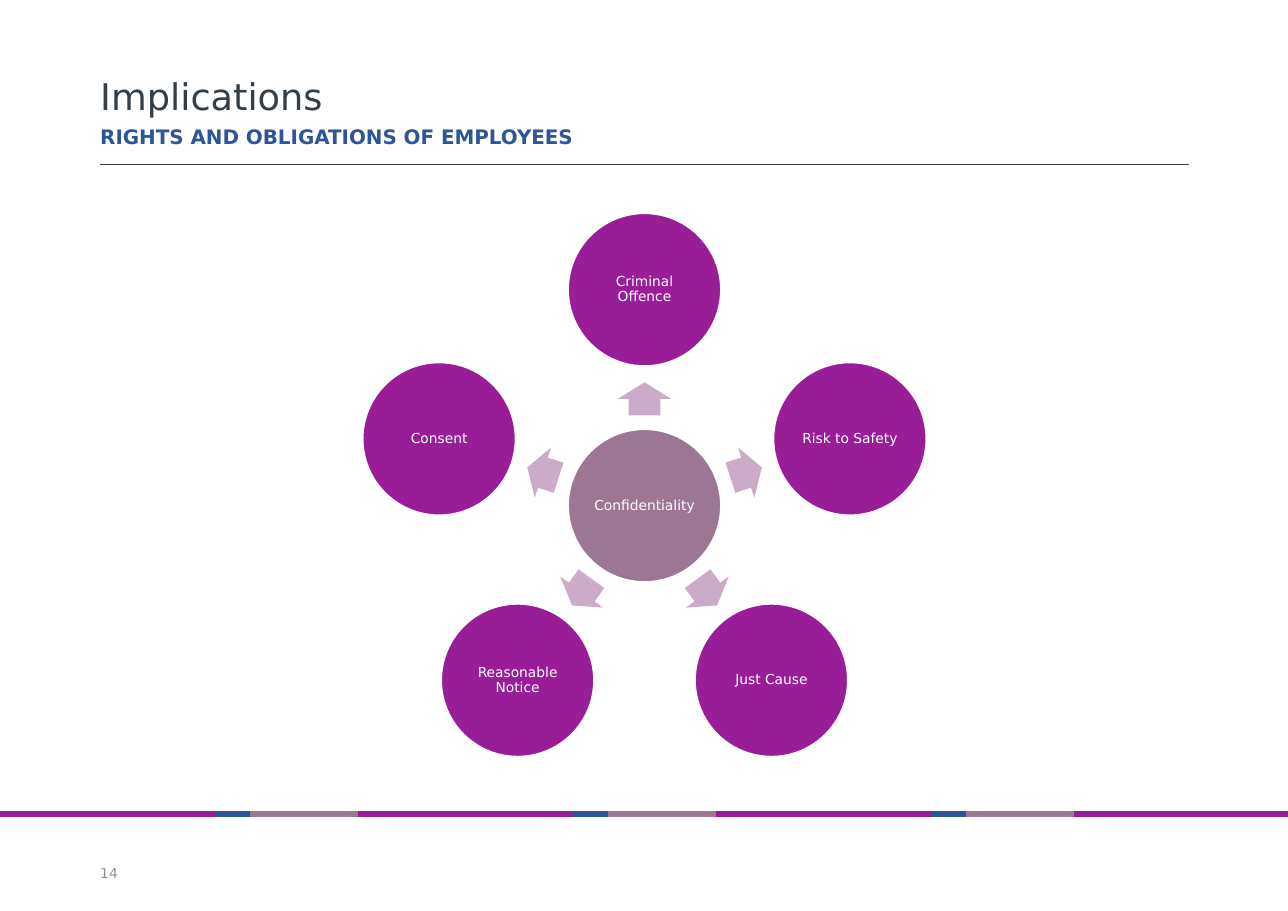
from dataclasses import dataclass
from math import cos, radians, sin

from pptx import Presentation
from pptx.dml.color import RGBColor
from pptx.enum.shapes import MSO_CONNECTOR, MSO_SHAPE
from pptx.enum.text import MSO_ANCHOR, PP_ALIGN
from pptx.oxml.ns import qn
from pptx.util import Inches, Pt

STRAIGHT = MSO_CONNECTOR.STRAIGHT
ELLIPSE = MSO_SHAPE.OVAL
ARROW = MSO_SHAPE.RIGHT_ARROW
TOP, MIDDLE, BOTTOM = MSO_ANCHOR.TOP, MSO_ANCHOR.MIDDLE, MSO_ANCHOR.BOTTOM
CENTER = PP_ALIGN.CENTER

PAGE_WIDTH, PAGE_HEIGHT = 11.69, 8.27
MARGIN = 0.91
CONTENT_WIDTH = 9.88

HUB_X, HUB_Y = 5.85, 4.59
CIRCLE_SIZE = 1.4
CIRCLE_ORBIT = 1.96
ARROW_LENGTH, ARROW_WIDTH = 0.3, 0.48
ARROW_ORBIT = 0.97

STRIPE_Y = 7.39
STRIPE_PERIOD = 3.25

TOPICS = ["Criminal Offence", "Risk to Safety", "Just Cause",
          "Reasonable Notice", "Consent"]


@dataclass(frozen=True)
class Theme:
    font: str = "DejaVu Sans"
    ink: str = "333F48"
    blue: str = "2C5697"
    purple: str = "981D97"
    mauve: str = "9B7793"
    pale_mauve: str = "CAACC9"
    grey: str = "909395"
    white: str = "FFFFFF"
    title_size: float = 24
    subtitle_size: float = 13
    label_size: float = 9


class SlideBuilder:
    def __init__(self, slide, theme):
        self.slide = slide
        self.theme = theme

    def style_text(self, frame, text, size, color, inset=0, bold=False):
        frame.text = text
        frame.margin_left = frame.margin_right = Inches(inset)
        frame.margin_top = frame.margin_bottom = Inches(inset)
        font = frame.paragraphs[0].runs[0].font
        font.name = self.theme.font
        font.size = Pt(size)
        font.bold = bold
        font.color.rgb = RGBColor.from_string(color)

    def text(self, text, top, width, height, size, color,
             anchor=TOP, bold=False, wrap=True):
        box = self.slide.shapes.add_textbox(
            Inches(MARGIN), Inches(top), Inches(width), Inches(height))
        self.style_text(box.text_frame, text, size, color, bold=bold)
        box.text_frame.word_wrap = wrap
        box.text_frame.vertical_anchor = anchor

    def rule(self, left, right, y, color, weight):
        line = self.slide.shapes.add_connector(
            STRAIGHT, Inches(left), Inches(y), Inches(right), Inches(y))
        line.line.color.rgb = RGBColor.from_string(color)
        line.line.width = Pt(weight)
        properties = line._element.spPr
        properties.append(properties.makeelement(qn("a:effectLst"), {}))

    def centred_shape(self, kind, x, y, width, height, fill):
        """Add a filled shape whose middle lies at x, y."""
        shape = self.slide.shapes.add_shape(
            kind, Inches(x - width / 2), Inches(y - height / 2),
            Inches(width), Inches(height))
        shape.shadow.inherit = False
        shape.fill.solid()
        shape.fill.fore_color.rgb = RGBColor.from_string(fill)
        return shape

    def circle(self, label, x, y, fill):
        circle = self.centred_shape(ELLIPSE, x, y, CIRCLE_SIZE, CIRCLE_SIZE, fill)
        circle.line.color.rgb = RGBColor.from_string(self.theme.white)
        circle.line.width = Pt(2)
        frame = circle.text_frame
        self.style_text(frame, label, self.theme.label_size,
                        self.theme.white, inset=0.01)
        frame.word_wrap = True
        frame.vertical_anchor = MIDDLE
        frame.paragraphs[0].alignment = CENTER
        frame.paragraphs[0].line_spacing = 0.9

    def arrow(self, x, y, angle):
        arrow = self.centred_shape(
            ARROW, x, y, ARROW_LENGTH, ARROW_WIDTH, self.theme.pale_mauve)
        arrow.line.fill.background()
        arrow.adjustments[0] = 0.6
        arrow.adjustments[1] = 0.5
        arrow.rotation = angle % 360

    def stripe(self):
        """Repeat the three-colour band until the right page edge."""
        bands = [(0, 1.95, self.theme.purple), (1.95, 2.27, self.theme.blue),
                 (2.27, STRIPE_PERIOD, self.theme.mauve)]
        for repeat in range(4):
            offset = repeat * STRIPE_PERIOD
            for start, end, color in bands:
                if offset + start < PAGE_WIDTH:
                    self.rule(offset + start, min(offset + end, PAGE_WIDTH),
                              STRIPE_Y, color, 4)

    def radial_diagram(self, hub, topics):
        self.circle(hub, HUB_X, HUB_Y, self.theme.mauve)
        for index, topic in enumerate(topics):
            angle = -90 + index * 360 / len(topics)
            across, down = cos(radians(angle)), sin(radians(angle))
            self.arrow(HUB_X + ARROW_ORBIT * across,
                       HUB_Y + ARROW_ORBIT * down, angle)
            self.circle(topic, HUB_X + CIRCLE_ORBIT * across,
                        HUB_Y + CIRCLE_ORBIT * down, self.theme.purple)


def main():
    presentation = Presentation()
    presentation.slide_width = Inches(PAGE_WIDTH)
    presentation.slide_height = Inches(PAGE_HEIGHT)
    theme = Theme()
    page = SlideBuilder(
        presentation.slides.add_slide(presentation.slide_layouts[6]), theme)

    page.stripe()
    page.rule(MARGIN, MARGIN + CONTENT_WIDTH, 1.49, theme.ink, 0.25)
    page.text("Implications", 0.67, CONTENT_WIDTH, 0.43,
              theme.title_size, theme.ink)
    page.text("RIGHTS AND OBLIGATIONS OF EMPLOYEES", 1.13, CONTENT_WIDTH, 0.25,
              theme.subtitle_size, theme.blue, bold=True)
    page.text("14", 7.72, 0.28, 0.28, theme.label_size, theme.grey,
              anchor=BOTTOM, wrap=False)
    page.radial_diagram("Confidentiality", TOPICS)

    presentation.save("out.pptx")


if __name__ == "__main__":
    main()
